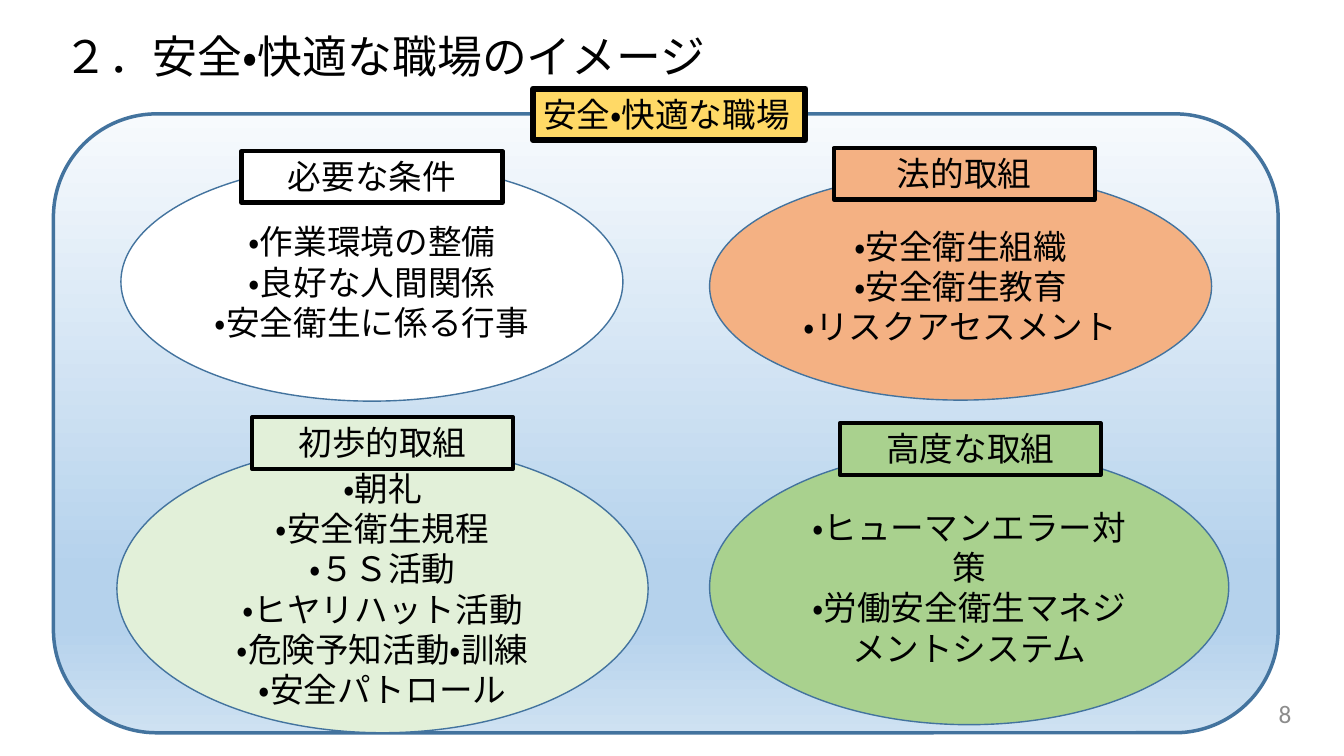
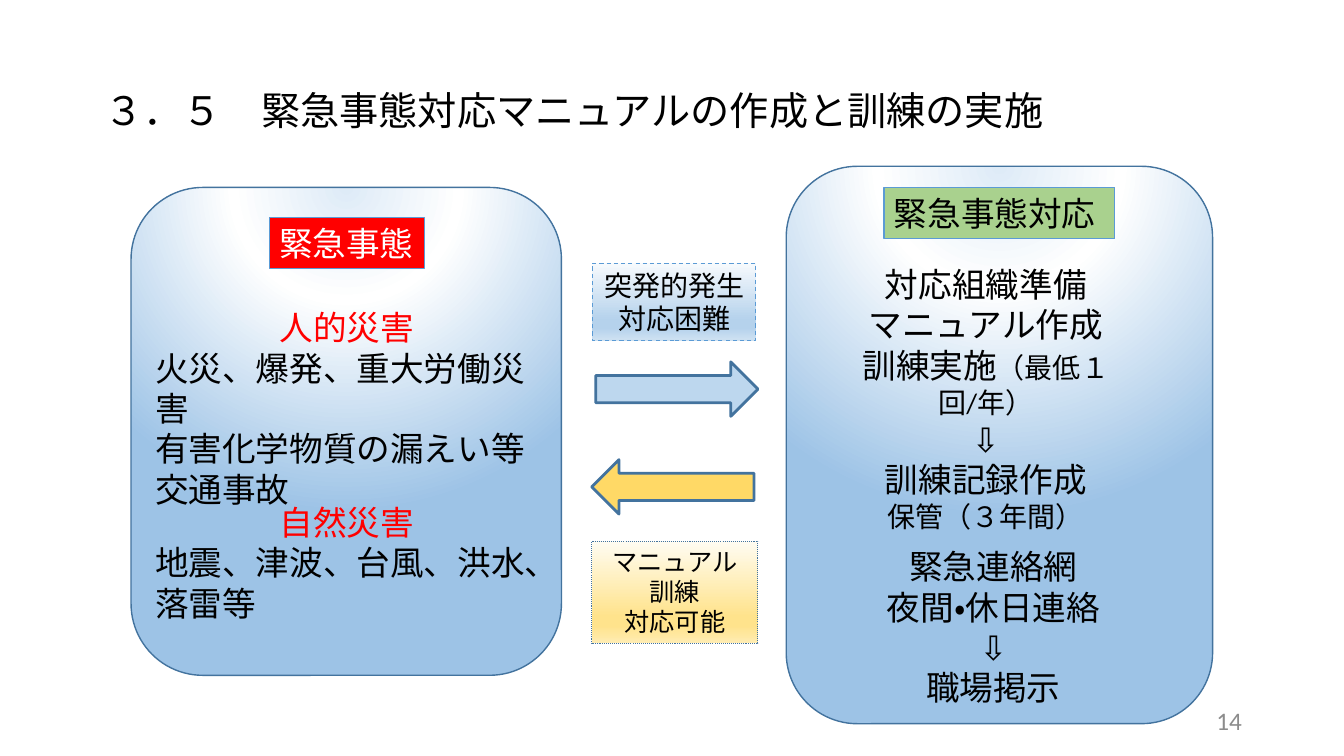
from collections import namedtuple

from lxml import etree
from pptx import Presentation
from pptx.dml.color import RGBColor
from pptx.enum.dml import MSO_LINE
from pptx.enum.lang import MSO_LANGUAGE_ID
from pptx.enum.shapes import MSO_SHAPE
from pptx.enum.text import MSO_ANCHOR, MSO_AUTO_SIZE, PP_ALIGN
from pptx.oxml.ns import qn
from pptx.util import Inches, Pt

ROUNDED, RECTANGLE = MSO_SHAPE.ROUNDED_RECTANGLE, MSO_SHAPE.RECTANGLE
ELLIPSE, ARROW = MSO_SHAPE.OVAL, MSO_SHAPE.RIGHT_ARROW
LEFT, CENTER, RIGHT = PP_ALIGN.LEFT, PP_ALIGN.CENTER, PP_ALIGN.RIGHT
TOP, MIDDLE = MSO_ANCHOR.TOP, MSO_ANCHOR.MIDDLE
GROW, FIXED = MSO_AUTO_SIZE.SHAPE_TO_FIT_TEXT, MSO_AUTO_SIZE.NONE
DASH, DOT = MSO_LINE.DASH, MSO_LINE.ROUND_DOT
JAPANESE = MSO_LANGUAGE_ID.JAPANESE

WIDTH, HEIGHT = Inches(13.33), Inches(7.5)
COLUMNS, ROWS = 160, 90
FONT = "Calibri"
COLORS = {
    "black": "000000", "white": "FFFFFF", "red": "FF0000", "grey": "8C8C8C",
    "outline": "43739E", "accent": "5B9BD5", "yellow": "FFD966",
    "orange": "F4B183", "green": "A9D18E", "pale green": "E2F0D9",
    "pale blue": "BDD7EE",
}
GRADIENTS = {
    "blue haze": [(0, "F7FAFD"), (74, "B5D2EC"), (83, "B5D2EC"), (100, "CEE1F2")],
    "gold haze": [(0, "FFFCF2"), (74, "FFE38C"), (83, "FFE38C"), (100, "FFECB2")],
    "spotlight": [(0, "DEEBF7"), (35, "FFFFFF"), (100, "9DC3E6")],
}
SPOTLIGHT_CENTER = {"l": 50, "t": -80, "r": 50, "b": 180}

Box = namedtuple("Box", "left top width height")


def inside(box, left, top, width, height):
    return Box(box.left + left, box.top + top, width, height)


def emu(box):
    column, row = WIDTH / COLUMNS, HEIGHT / ROWS
    return [round(length * unit) for length, unit in zip(box, (column, row) * 2)]


def rgb(name):
    return RGBColor.from_string(COLORS[name])


def fill_gradient(shape, name):
    gradient = etree.Element(qn("a:gradFill"), rotWithShape="1")
    stops = etree.SubElement(gradient, qn("a:gsLst"))
    for position, color in GRADIENTS[name]:
        stop = etree.SubElement(stops, qn("a:gs"), pos=str(position * 1000))
        etree.SubElement(stop, qn("a:srgbClr"), val=color)
    if name == "spotlight":
        circle = etree.SubElement(gradient, qn("a:path"))
        circle.set("path", "circle")
        center = {side: str(share * 1000) for side, share in SPOTLIGHT_CENTER.items()}
        etree.SubElement(circle, qn("a:fillToRect"), center)
    else:
        etree.SubElement(gradient, qn("a:lin"), ang="5400000", scaled="0")
    shape._element.spPr.find(qn("a:prstGeom")).addnext(gradient)


def write(shape, lines, size=24, color="black", align=CENTER, anchor=TOP,
          auto_size=GROW, spacing=None):
    frame = shape.text_frame
    frame_format = {"word_wrap": True, "auto_size": auto_size, "vertical_anchor": anchor}
    for name, value in frame_format.items():
        setattr(frame, name, value)
    for index, line in enumerate(lines):
        paragraph = frame.paragraphs[0] if index == 0 else frame.add_paragraph()
        runs = [(line, {})] if isinstance(line, str) else line
        paragraph.alignment = runs[0][1].get("align", align)
        if spacing:
            paragraph.line_spacing = spacing
        for text, changes in runs:
            run = paragraph.add_run()
            run.text = text
            font_format = {"name": FONT, "size": Pt(changes.get("size", size)),
                           "language_id": JAPANESE}
            for name, value in font_format.items():
                setattr(run.font, name, value)
            run.font.color.rgb = rgb(changes.get("color", color))


def add_text(shapes, box, lines, **text_format):
    write(shapes.add_textbox(*emu(box)), lines, **text_format)


def add_panel(shapes, kind, box, fill, line="outline", weight=1, dash=None,
              lines=(), **text_format):
    shape = shapes.add_shape(kind, *emu(box))
    shape.shadow.inherit = False
    if fill in GRADIENTS:
        fill_gradient(shape, fill)
    else:
        shape.fill.solid()
        shape.fill.fore_color.rgb = rgb(fill)
    shape.line.color.rgb = rgb(line)
    shape.line.width = Pt(weight)
    if dash:
        shape.line.dash_style = dash
    if lines:
        write(shape, lines, **text_format)
    return shape


def add_title(slide, box, text, size, **text_format):
    add_text(slide.shapes, box, [text], size=size, align=LEFT, **text_format)


def add_number(slide, left, top, number):
    add_text(slide.shapes, Box(left, top, 36, 4.8), [number], size=18, color="grey",
             align=RIGHT, anchor=MIDDLE, auto_size=FIXED)


def add_topic(slide, box, fill, heading, lines, rise, shift=0):
    add_panel(slide.shapes, ELLIPSE, box, fill, lines=lines, anchor=MIDDLE, auto_size=FIXED)
    tag_width = 31.08
    tag = inside(box, (box.width - tag_width) / 2 + shift, -rise, tag_width, 6.12)
    add_panel(slide.shapes, RECTANGLE, tag, fill, "black", 3, lines=[heading])


def add_card(slide, box, tag, fill, heading, heading_color, texts):
    shapes = slide.shapes.add_group_shape().shapes
    add_panel(shapes, ROUNDED, box, "spotlight")
    for place, lines, align in texts:
        add_text(shapes, inside(box, *place), lines, align=align)
    add_panel(shapes, RECTANGLE, inside(box, *tag), fill, "accent", 0.75,
              lines=[heading], color=heading_color, align=LEFT)


def add_exchange(slide, box):
    shapes = slide.shapes
    add_panel(shapes, RECTANGLE, inside(box, 0.1, 0, 19.44, 9.24), "blue haze", "accent",
              0.75, DASH, ["突発的発生", "対応困難"], size=20)
    arrows = [(0.48, 11.76, "pale blue", 0), (0, 23.4, "yellow", 180)]
    for left, top, fill, rotation in arrows:
        arrow = add_panel(shapes, ARROW, inside(box, left, top, 19.32, 6.48), fill, weight=2)
        arrow.rotation = rotation
    add_panel(shapes, RECTANGLE, inside(box, 0, 33.12, 19.8, 12.12), "gold haze",
              weight=0.75, dash=DOT, lines=["マニュアル", "訓練", "対応可能"], size=18)


def build_workplace(slide):
    add_panel(slide.shapes, ROUNDED, Box(6.36, 13.56, 145.8, 73.68), "blue haze", weight=2.5)
    add_panel(slide.shapes, RECTANGLE, Box(63.48, 10.56, 32.4, 6.12), "yellow", "black",
              4.5, lines=["安全・快適な職場"], align=LEFT)
    add_title(slide, Box(6.36, 2.88, 96.12, 7.92), "２．安全・快適な職場のイメージ", 32)
    add_number(slide, 118.92, 82.56, "8")
    add_topic(slide, Box(14.4, 19.32, 59.76, 28.44), "white", "必要な条件",
              ["・作業環境の整備", "・良好な人間関係", "・安全衛生に係る行事"], 1.32)
    add_topic(slide, Box(84.48, 53.52, 61.8, 32.76), "green", "高度な取組",
              ["・ヒューマンエラー対策", "・労働安全衛生マネジメントシステム"], 3.12, 0.12)
    add_topic(slide, Box(13.92, 52.92, 63.24, 34.32), "pale green", "初歩的取組",
              ["・朝礼", "・安全衛生規程", "・５Ｓ活動", "・ヒヤリハット活動",
               "・危険予知活動・訓練", "・安全パトロール"], 3.24)
    add_topic(slide, Box(84.48, 20.52, 59.76, 27.12), "orange", "法的取組",
              ["・安全衛生組織", "・安全衛生教育", "・リスクアセスメント"], 2.88, 0.42)


def build_emergency(slide):
    add_title(slide, Box(11.28, 9.6, 138, 7.68),
              "３．５　緊急事態対応マニュアルの作成と訓練の実施", 28,
              anchor=MIDDLE, auto_size=FIXED, spacing=0.9)
    disaster = {"color": "red", "align": CENTER}
    small = {"size": 20}
    add_card(slide, Box(15.6, 22.32, 51.24, 58.08), (16.44, 3.6, 18.48, 6), "red",
             "緊急事態", "white", [
                 ((1.68, 13.68, 48, 20.64),
                  [[("人的災害", disaster)], "火災、爆発、重大労働災害",
                   "有害化学物質の漏えい等", "交通事故"], LEFT),
                 ((1.68, 36.84, 48, 15.72),
                  [[("自然災害", disaster)], "地震、津波、台風、洪水、", "落雷等"], LEFT)])
    add_card(slide, Box(93.6, 19.8, 50.76, 66.36), (11.64, 2.52, 27.48, 6.12), "green",
             "緊急事態対応", "black", [
                 ((4.2, 11.04, 39.12, 30.24),
                  ["対応組織準備", "マニュアル作成",
                   [("訓練実施", {}), ("（最低１回/年）", small)], "⇩",
                   "訓練記録作成", [("保管（３年間）", small)]], CENTER),
                 ((10.2, 44.64, 28.92, 20.64),
                  ["緊急連絡網", "夜間・休日連絡", "⇩", "職場掲示"], CENTER)])
    add_exchange(slide, Box(70.44, 31.32, 19.8, 45.24))
    add_number(slide, 113.04, 83.4, "14")


def main():
    presentation = Presentation()
    presentation.slide_width, presentation.slide_height = WIDTH, HEIGHT
    blank = presentation.slide_layouts[6]
    for build in (build_workplace, build_emergency):
        build(presentation.slides.add_slide(blank))
    presentation.save("out.pptx")


if __name__ == "__main__":
    main()
